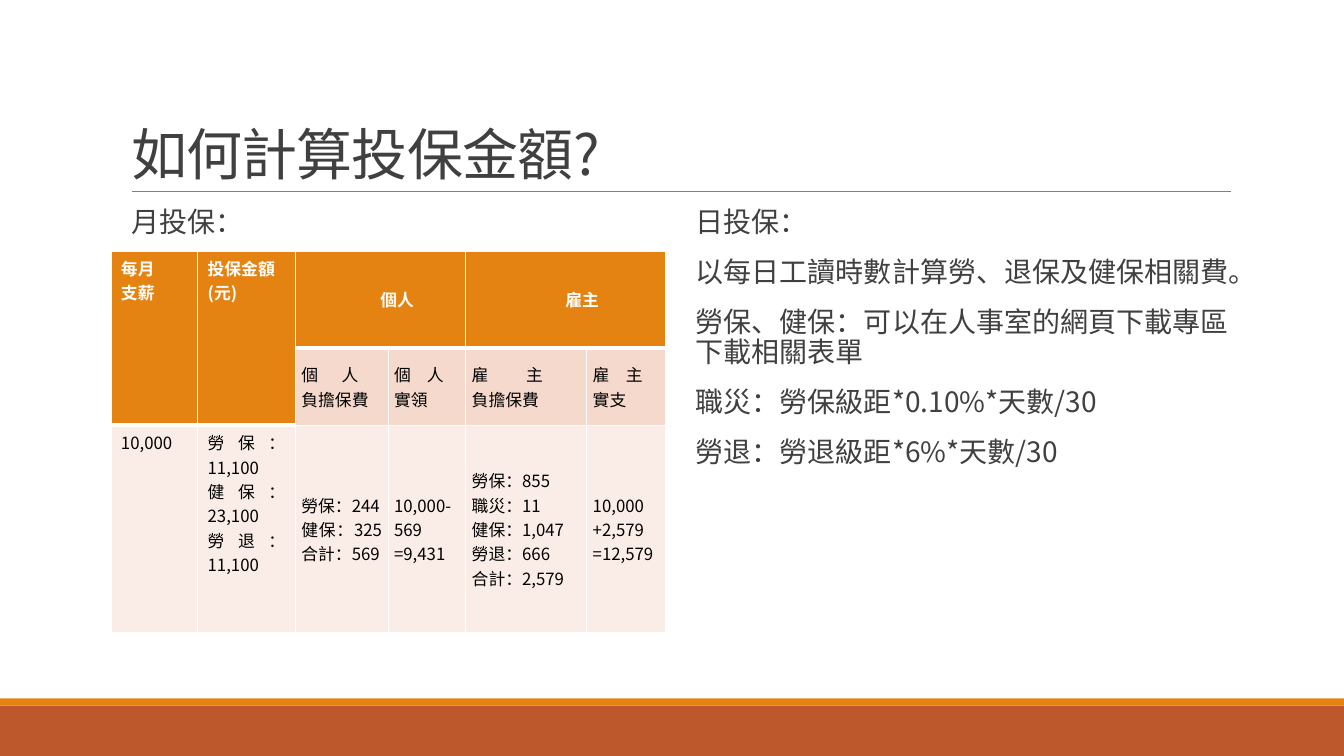
from dataclasses import dataclass

from lxml.etree import SubElement
from pptx import Presentation
from pptx.dml.color import RGBColor
from pptx.enum.shapes import MSO_CONNECTOR, MSO_SHAPE
from pptx.enum.text import MSO_ANCHOR, MSO_AUTO_SIZE, PP_ALIGN
from pptx.oxml.ns import qn
from pptx.slide import Slide
from pptx.table import _Cell
from pptx.text.text import TextFrame, _Paragraph
from pptx.util import Pt

PX = 9144
FONT = "Noto Sans CJK SC"
COLORS = {
    "orange": "E48312",
    "rust": "BD582C",
    "rule": "808080",
    "text": "404040",
    "white": "FFFFFF",
    "black": "000000",
    "subheader": "F5D9CC",
    "body": "FAEDE7",
}


@dataclass(frozen=True)
class Band:
    top: int
    height: int
    color: str


@dataclass(frozen=True)
class Column:
    left: int
    paragraphs: tuple[str, ...]


@dataclass(frozen=True)
class TableCell:
    row: int
    column: int
    paragraphs: tuple[str, ...]
    row_span: int = 1
    column_span: int = 1


BANDS = (Band(700, 50, "rust"), Band(693, 7, "orange"))
TEXT_COLUMNS = (
    Column(120, ("月投保：",)),
    Column(680, (
        "日投保：",
        "以每日工讀時數計算勞、退保及健保相關費。",
        "勞保、健保：可以在人事室的網頁下載專區下載相關表單",
        "職災：勞保級距*0.10%*天數/30",
        "勞退：勞退級距*6%*天數/30",
    )),
)
COLUMN_WIDTHS = (86, 97, 92, 77, 120, 78)
ROW_HEIGHTS = (96, 77, 206)
ROW_FILLS = ("orange", "subheader", "body")
TABLE_CELLS = (
    TableCell(0, 0, ("每月\n支薪",), row_span=2),
    TableCell(0, 1, ("投保金額(元)",), row_span=2),
    TableCell(0, 2, ("個人",), column_span=2),
    TableCell(0, 4, ("雇主",), column_span=2),
    TableCell(1, 2, ("個人\n負擔保費",)),
    TableCell(1, 3, ("個人\n實領",)),
    TableCell(1, 4, ("雇主\n負擔保費",)),
    TableCell(1, 5, ("雇主\n實支",)),
    TableCell(2, 0, ("10,000",)),
    TableCell(2, 1, ("勞保：11,100", "健保：23,100", "勞退：11,100")),
    TableCell(2, 2, ("勞保：244", "健保：325\n合計：569")),
    TableCell(2, 3, ("10,000- 569", "=9,431")),
    TableCell(2, 4, ("勞保：855", "職災：11", "健保：1,047", "勞退：666", "合計：2,579")),
    TableCell(2, 5, ("10,000\n+2,579\n=12,579",)),
)


def rgb(name: str) -> RGBColor:
    return RGBColor.from_string(COLORS[name])


def style(paragraph: _Paragraph, size: int, color: str, bold: bool = False) -> None:
    font = paragraph.font
    font.size = Pt(size)
    font.bold = bold
    font.name = FONT
    font.color.rgb = rgb(color)
    properties = paragraph._p.pPr.find(qn("a:defRPr"))
    SubElement(properties, qn("a:ea"), typeface=FONT)


def write(frame: TextFrame, texts: tuple[str, ...]) -> list[_Paragraph]:
    for index, text in enumerate(texts):
        paragraph = frame.add_paragraph() if index else frame.paragraphs[0]
        paragraph.text = text
    return list(frame.paragraphs)


def indent(paragraph: _Paragraph, left: int) -> None:
    paragraph._p.get_or_add_pPr().set("marL", str(left * PX))


def add_background(slide: Slide) -> None:
    for band in BANDS:
        shape = slide.shapes.add_shape(
            MSO_SHAPE.RECTANGLE, 0, band.top * PX, 1333 * PX, band.height * PX)
        shape.shadow.inherit = False
        shape.fill.solid()
        shape.fill.fore_color.rgb = rgb(band.color)
        shape.line.fill.background()
    rule = slide.shapes.add_connector(
        MSO_CONNECTOR.STRAIGHT, 131 * PX, 190 * PX, 1221 * PX, 190 * PX)
    rule.line.color.rgb = rgb("rule")
    rule.line.width = Pt(0.5)
    SubElement(rule._element.spPr, qn("a:effectLst"))


def format_title(slide: Slide) -> None:
    title = slide.shapes.title
    title.left, title.top, title.width, title.height = (
        value * PX for value in (120, 31, 1100, 159))
    frame = title.text_frame
    frame.auto_size = MSO_AUTO_SIZE.NONE
    frame.vertical_anchor = MSO_ANCHOR.BOTTOM
    paragraph = write(frame, ("如何計算投保金額?",))[0]
    paragraph.alignment = PP_ALIGN.LEFT
    paragraph.line_spacing = 0.85
    style(paragraph, 40, "text")
    paragraph._p.pPr.find(qn("a:defRPr")).set("spc", "-50")


def add_text_column(slide: Slide, column: Column) -> None:
    box = slide.shapes.add_textbox(column.left * PX, 202 * PX, 540 * PX, 440 * PX)
    frame = box.text_frame
    frame.word_wrap = True
    frame.margin_left = frame.margin_right = 0
    frame.margin_top = frame.margin_bottom = 5 * PX
    for paragraph in write(frame, column.paragraphs):
        paragraph.line_spacing = 0.9
        paragraph.space_before = Pt(12)
        paragraph.space_after = Pt(2)
        indent(paragraph, 10)
        style(paragraph, 20, "text")


def set_borders(cell: _Cell, top: int, bottom: int) -> None:
    properties = cell._tc.get_or_add_tcPr()
    for side, width in (("L", 1), ("R", 1), ("T", top), ("B", bottom)):
        line = SubElement(properties, qn(f"a:ln{side}"), w=str(Pt(width)))
        fill = SubElement(line, qn("a:solidFill"))
        SubElement(fill, qn("a:srgbClr"), val=COLORS["white"])


def fill_cell(cell: _Cell, content: TableCell) -> None:
    header = content.row == 0
    plain = content.column == 0 or (content.column == 1)
    if not plain:
        cell.vertical_anchor = MSO_ANCHOR.MIDDLE
        cell.margin_left = cell.margin_right = 6 * PX
        cell.margin_top = cell.margin_bottom = 0
    for paragraph in write(cell.text_frame, content.paragraphs):
        if header and not plain:
            paragraph.alignment = PP_ALIGN.CENTER
            indent(paragraph, 33)
        elif not header and content.column > 0:
            paragraph.alignment = PP_ALIGN.JUSTIFY
        style(paragraph, 12, "white" if header else "black", header)


def add_premium_table(slide: Slide) -> None:
    table = slide.shapes.add_table(
        len(ROW_HEIGHTS), len(COLUMN_WIDTHS), 110 * PX, 249 * PX,
        sum(COLUMN_WIDTHS) * PX, sum(ROW_HEIGHTS) * PX).table
    table.first_row = table.horz_banding = False
    for column, width in zip(table.columns, COLUMN_WIDTHS):
        column.width = width * PX
    for row_index, height in enumerate(ROW_HEIGHTS):
        table.rows[row_index].height = height * PX
        for column_index in range(len(COLUMN_WIDTHS)):
            header_end = 1 if column_index < 2 else 0
            cell = table.cell(row_index, column_index)
            set_borders(cell, 3 if row_index == header_end + 1 else 1,
                        3 if row_index == header_end else 1)
            cell.fill.solid()
            fill = "orange" if row_index <= header_end else ROW_FILLS[row_index]
            cell.fill.fore_color.rgb = rgb(fill)
    for content in TABLE_CELLS:
        cell = table.cell(content.row, content.column)
        if content.row_span > 1 or content.column_span > 1:
            cell.merge(table.cell(content.row + content.row_span - 1,
                                  content.column + content.column_span - 1))
        fill_cell(cell, content)


def main() -> None:
    presentation = Presentation()
    presentation.slide_width = 1333 * PX
    presentation.slide_height = 750 * PX
    slide = presentation.slides.add_slide(presentation.slide_layouts[5])
    add_background(slide)
    format_title(slide)
    for column in TEXT_COLUMNS:
        add_text_column(slide, column)
    add_premium_table(slide)
    presentation.save("out.pptx")


if __name__ == "__main__":
    main()
